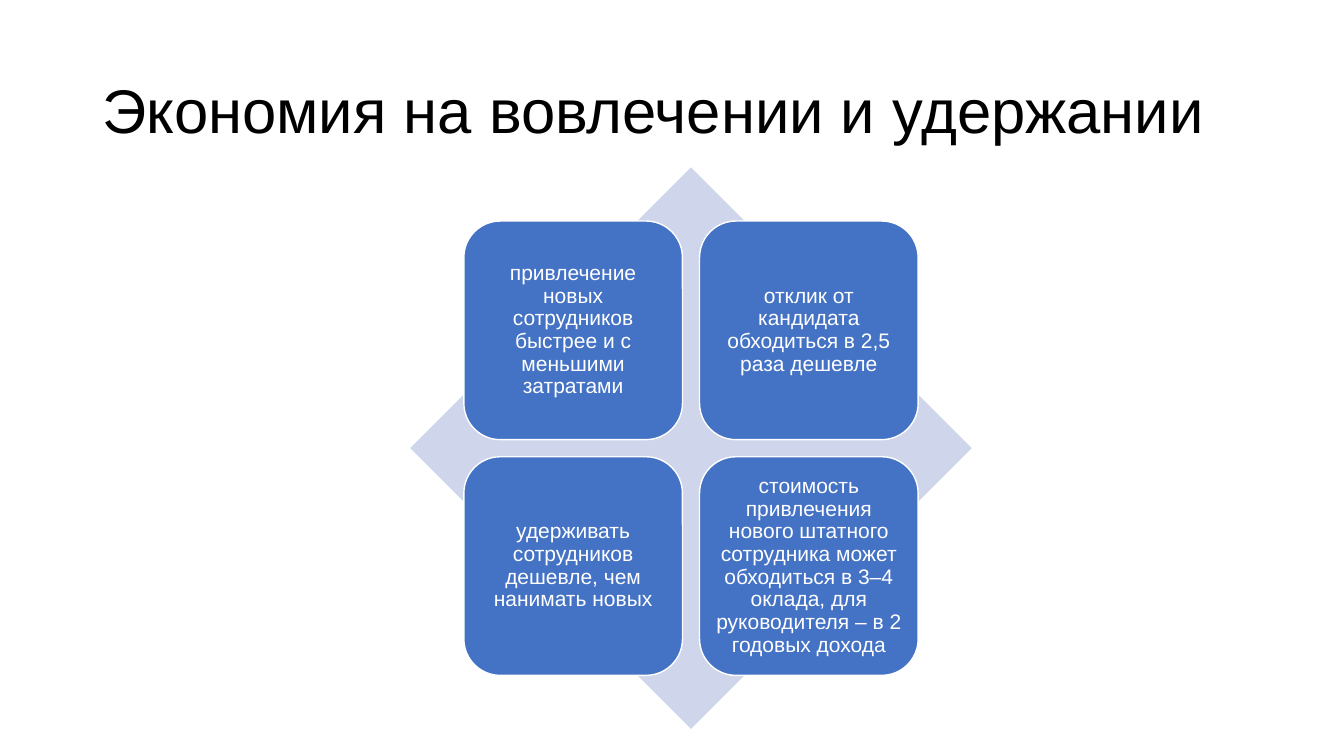
from pptx import Presentation
from pptx.dml.color import RGBColor
from pptx.enum.shapes import MSO_SHAPE
from pptx.enum.text import MSO_ANCHOR, PP_ALIGN
from pptx.util import Cm, Pt

DIAMOND = MSO_SHAPE.DIAMOND
ROUNDED = MSO_SHAPE.ROUNDED_RECTANGLE
MIDDLE = MSO_ANCHOR.MIDDLE
LEFT, CENTER = PP_ALIGN.LEFT, PP_ALIGN.CENTER

TITLE = "Экономия на вовлечении и удержании"
CARDS = [
    "привлечение новых сотрудников быстрее и с меньшими затратами",
    "отклик от кандидата обходиться в 2,5 раза дешевле",
    "удерживать сотрудников дешевле, чем нанимать новых",
    "стоимость привлечения нового штатного сотрудника может обходиться "
    "в 3–4 оклада, для руководителя – в 2 годовых дохода",
]
COLUMNS = 2
CARD_SIZE = 5.51
CARD_GAP = 0.43


def color(value):
    return RGBColor.from_string(value)


def write(shape, text, size, font_color, align, **frame_format):
    frame = shape.text_frame
    frame_format = {"word_wrap": True, "vertical_anchor": MIDDLE, **frame_format}
    for name, value in frame_format.items():
        setattr(frame, name, value)
    para = frame.paragraphs[0]
    para.alignment = align
    para.line_spacing = 0.9
    span = para.add_run()
    span.text = text
    for name, value in {"name": "Arial", "size": Pt(size)}.items():
        setattr(span.font, name, value)
    span.font.color.rgb = color(font_color)


def add_filled(page, kind, left, top, size, fill):
    """Add a square-bounded preset shape without outline or shadow."""
    shape = page.shapes.add_shape(kind, Cm(left), Cm(top), Cm(size), Cm(size))
    shape.shadow.inherit = False
    shape.fill.solid()
    shape.fill.fore_color.rgb = color(fill)
    shape.line.fill.background()
    return shape


def add_title(page, left, top, width, height):
    box = page.shapes.add_textbox(Cm(left), Cm(top), Cm(width), Cm(height))
    write(box, TITLE, 44, "000000", LEFT)


def add_card(page, left, top, text):
    card = add_filled(page, ROUNDED, left, top, CARD_SIZE, "4472C4")
    card.line.color.rgb = color("FFFFFF")
    card.line.width = Pt(1)
    sides = ("margin_left", "margin_top", "margin_right", "margin_bottom")
    write(card, text, 15, "FFFFFF", CENTER, **dict.fromkeys(sides, Cm(0.15)))


def add_matrix(page, left, top, size):
    """Centre a grid of cards on a diamond of the given size."""
    add_filled(page, DIAMOND, left, top, size, "CFD5EA")
    step = CARD_SIZE + CARD_GAP
    inset = (size - CARD_SIZE - step) / 2
    for index, text in enumerate(CARDS):
        row, column = divmod(index, COLUMNS)
        add_card(page, left + inset + column * step, top + inset + row * step, text)


def main():
    deck = Presentation()
    deck.slide_width, deck.slide_height = Cm(33.87), Cm(19.05)
    page = deck.slides.add_slide(deck.slide_layouts[6])
    add_title(page, 2.33, 1.01, 29.21, 3.68)
    add_matrix(page, 10.34, 4.22, 14.15)
    deck.save("out.pptx")


if __name__ == "__main__":
    main()
